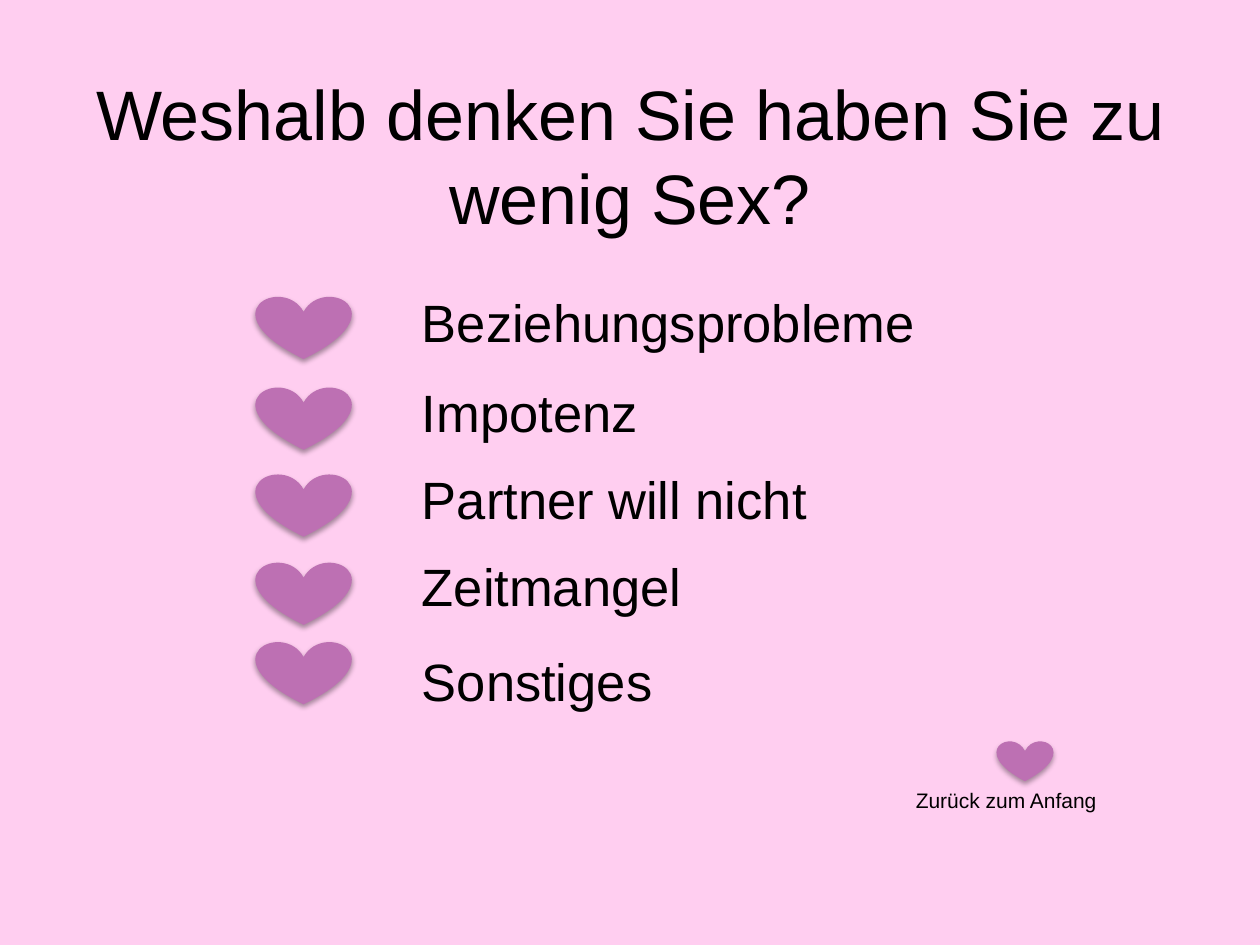
from lxml.etree import SubElement
from pptx import Presentation
from pptx.dml.color import RGBColor
from pptx.enum.shapes import MSO_SHAPE
from pptx.enum.text import MSO_ANCHOR, MSO_AUTO_SIZE, PP_ALIGN
from pptx.oxml.ns import qn
from pptx.util import Inches, Pt

TITLE = "Weshalb denken Sie haben Sie zu wenig Sex?"
ANSWERS = [
    ("Beziehungsprobleme", 2.35, 2.25),
    ("Impotenz", 3.07, 2.97),
    ("Partner will nicht", 3.76, 3.66),
    ("Zeitmangel", 4.46, 4.35),
    ("Sonstiges", 5.09, 5.1),
]
BACK_LABEL = "Zurück zum Anfang"

PINK = RGBColor(0xFF, 0xCE, 0xF0)
MAUVE = RGBColor(0xBD, 0x70, 0xB3)
BLACK = RGBColor(0, 0, 0)
FONT = "Arial"
HEART_COLUMN, TEXT_COLUMN = 2.03, 3.25
HEART_SIZE = (0.76, 0.5)
ANSWER_SIZE = (5.58, 0.61)


def place(shape, left, top, width, height):
    shape.left, shape.top = Inches(left), Inches(top)
    shape.width, shape.height = Inches(width), Inches(height)


def write(shape, text, size, alignment=PP_ALIGN.LEFT):
    frame = shape.text_frame
    frame.word_wrap = True
    frame.text = text
    paragraph = frame.paragraphs[0]
    paragraph.alignment = alignment
    paragraph.font.name = FONT
    paragraph.font.size = Pt(size)
    paragraph.font.color.rgb = BLACK


def add_label(slide, text, size, *box):
    label = slide.shapes.add_textbox(*map(Inches, box))
    write(label, text, size)
    label.text_frame.auto_size = MSO_AUTO_SIZE.SHAPE_TO_FIT_TEXT


def add_heart(slide, *box):
    heart = slide.shapes.add_shape(MSO_SHAPE.HEART, *map(Inches, box))
    heart.fill.solid()
    heart.fill.fore_color.rgb = MAUVE
    heart.line.fill.background()
    heart.shadow.inherit = False
    effects = heart.element.spPr.find(qn("a:effectLst"))
    shadow = SubElement(effects, qn("a:outerShdw"), blurRad=str(Pt(3.1)),
                        dist=str(Pt(1.8)), dir="5400000", rotWithShape="0")
    color = SubElement(shadow, qn("a:srgbClr"), val=str(BLACK))
    SubElement(color, qn("a:alpha"), val="35000")


def main():
    presentation = Presentation()
    presentation.slide_width, presentation.slide_height = Inches(10), Inches(7.5)
    slide = presentation.slides.add_slide(presentation.slide_layouts[5])
    slide.background.fill.solid()
    slide.background.fill.fore_color.rgb = PINK

    title = slide.shapes.title
    place(title, 0.5, 0.6, 9, 1.25)
    write(title, TITLE, 40, PP_ALIGN.CENTER)
    title.text_frame.vertical_anchor = MSO_ANCHOR.MIDDLE
    title.text_frame.auto_size = MSO_AUTO_SIZE.NONE

    for answer, heart_top, text_top in ANSWERS:
        add_heart(slide, HEART_COLUMN, heart_top, *HEART_SIZE)
        add_label(slide, answer, 30, TEXT_COLUMN, text_top, *ANSWER_SIZE)

    add_heart(slide, 7.91, 5.88, 0.45, 0.32)
    add_label(slide, BACK_LABEL, 12, 7.17, 6.2, 1.93, 0.3)
    presentation.save("out.pptx")


if __name__ == "__main__":
    main()
